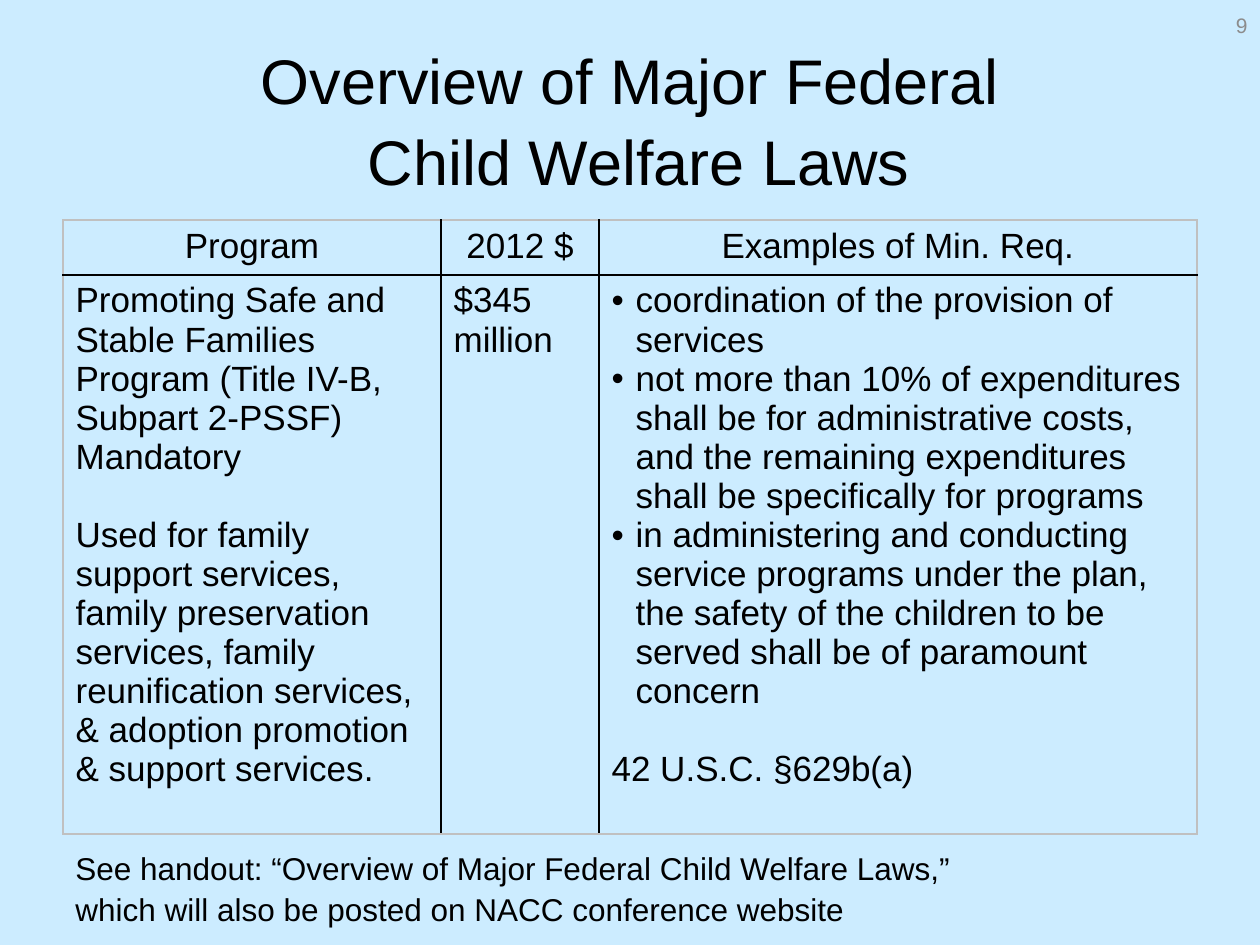
from pptx import Presentation
from pptx.dml.color import RGBColor
from pptx.enum.text import MSO_ANCHOR, MSO_AUTO_SIZE, PP_ALIGN
from pptx.oxml.ns import qn
from pptx.util import Emu, Pt
from lxml import etree

LEFT, CENTER, RIGHT = PP_ALIGN.LEFT, PP_ALIGN.CENTER, PP_ALIGN.RIGHT
TOP, MIDDLE = MSO_ANCHOR.TOP, MSO_ANCHOR.MIDDLE
NO_AUTOFIT = MSO_AUTO_SIZE.NONE
BACKGROUND = RGBColor(0xCC, 0xEC, 0xFF)
BLACK = RGBColor(0x00, 0x00, 0x00)
GRAY = RGBColor(0x8C, 0x8C, 0x8C)
FRAME = RGBColor(0xC0, 0xC0, 0xC0)
FONT = "Arial"
EMU_PER_PX = 914400 / 126
TABLE_SIZE = 20
BLANK_LINE = 22.3
BULLET_INDENT = 24

HEADINGS = ["Program", "2012 $", "Examples of Min. Req."]
PROGRAM = [
    "Promoting Safe and Stable Families Program (Title IV-B, Subpart 2-PSSF) Mandatory",
    "Used for family support services, family preservation services, family "
    "reunification services, & adoption promotion & support services.",
]
FUNDING = ["$345\vmillion"]
REQUIREMENTS = [
    "coordination of the provision of services",
    "not more than 10% of expenditures shall be for administrative costs, and the "
    "remaining expenditures shall be specifically for programs",
    "in administering and conducting service programs under the plan, the safety of "
    "the children to be served shall be of paramount concern",
]
CITATION = "42 U.S.C. §629b(a)"


def px(value):
    return Emu(round(value * EMU_PER_PX))


class SlideBuilder:
    """Hold the style and the current slide, and add each kind of element."""

    def __init__(self, presentation):
        self.slide = presentation.slides.add_slide(presentation.slide_layouts[5])
        fill = self.slide.background.fill
        fill.solid()
        fill.fore_color.rgb = BACKGROUND

    def format(self, paragraph, size, color=BLACK, align=LEFT):
        paragraph.alignment = align
        paragraph.font.name = FONT
        paragraph.font.size = Pt(size)
        paragraph.font.bold = False
        paragraph.font.color.rgb = color

    def fill_frame(self, frame, text, size, color, align, anchor, spacing):
        frame.word_wrap = True
        frame.auto_size = NO_AUTOFIT
        frame.vertical_anchor = anchor
        frame.text = text
        paragraph = frame.paragraphs[0]
        paragraph.line_spacing = spacing
        self.format(paragraph, size, color, align)

    def title(self, text, left, top, width, height):
        shape = self.slide.shapes.title
        shape.left, shape.top, shape.width, shape.height = map(px, (left, top, width, height))
        self.fill_frame(shape.text_frame, text, 36, BLACK, CENTER, MIDDLE, 1.08)

    def text(self, text, left, top, width, height, size, color=BLACK,
             align=LEFT, anchor=TOP, spacing=1.08):
        shape = self.slide.shapes.add_textbox(*map(px, (left, top, width, height)))
        self.fill_frame(shape.text_frame, text, size, color, align, anchor, spacing)

    def table(self, left, top, widths, heights):
        frame = self.slide.shapes.add_table(
            len(heights), len(widths), *map(px, (left, top, sum(widths), sum(heights))))
        table = frame.table
        table.first_row = table.horz_banding = False
        for column, width in zip(table.columns, widths):
            column.width = px(width)
        for row, height in zip(table.rows, heights):
            row.height = px(height)
        last_row, last_column = len(heights) - 1, len(widths) - 1
        for row in range(len(heights)):
            for column in range(len(widths)):
                cell = table.cell(row, column)
                self.borders(cell, {
                    "a:lnL": column == 0, "a:lnR": column == last_column,
                    "a:lnT": row == 0, "a:lnB": row == last_row})
                cell.fill.background()
        return table

    def borders(self, cell, outer_sides):
        properties = cell._tc.get_or_add_tcPr()
        for side, is_outer in outer_sides.items():
            line = etree.SubElement(properties, qn(side), w=str(Pt(1)))
            fill = etree.SubElement(line, qn("a:solidFill"))
            etree.SubElement(fill, qn("a:srgbClr"), val=str(FRAME if is_outer else BLACK))

    def cell(self, cell, texts, align=LEFT, bullets=0, gap=BLANK_LINE):
        frame = cell.text_frame
        for index, text in enumerate(texts):
            paragraph = frame.add_paragraph() if index else frame.paragraphs[0]
            paragraph.text = text
            if index < bullets:
                self.bullet(paragraph)
            elif index:
                paragraph.space_before = Pt(gap)
            self.format(paragraph, TABLE_SIZE, align=align)

    def bullet(self, paragraph):
        properties = paragraph._p.get_or_add_pPr()
        properties.set("marL", str(px(BULLET_INDENT)))
        properties.set("indent", str(-px(BULLET_INDENT)))
        etree.SubElement(properties, qn("a:buFont"), typeface=FONT)
        etree.SubElement(properties, qn("a:buChar"), char="•")


def main():
    presentation = Presentation()
    presentation.slide_width, presentation.slide_height = px(1260), px(945)
    builder = SlideBuilder(presentation)
    builder.title("Overview of Major Federal\v Child Welfare Laws", 63, 38, 1134, 158)
    builder.text(
        "See handout: “Overview of Major Federal Child Welfare Laws,” "
        "which will also be posted on NACC conference website",
        63, 840, 976, 89, 18)
    table = builder.table(63, 220, [378, 158, 598], [55, 559])
    for column, heading in enumerate(HEADINGS):
        builder.cell(table.cell(0, column), [heading], CENTER)
    builder.cell(table.cell(1, 0), PROGRAM)
    builder.cell(table.cell(1, 1), FUNDING)
    builder.cell(table.cell(1, 2), REQUIREMENTS + [CITATION], bullets=len(REQUIREMENTS))
    builder.text("9", 966, 0, 294, 50, 12, GRAY, RIGHT, MIDDLE, 1)
    presentation.save("out.pptx")


if __name__ == "__main__":
    main()
